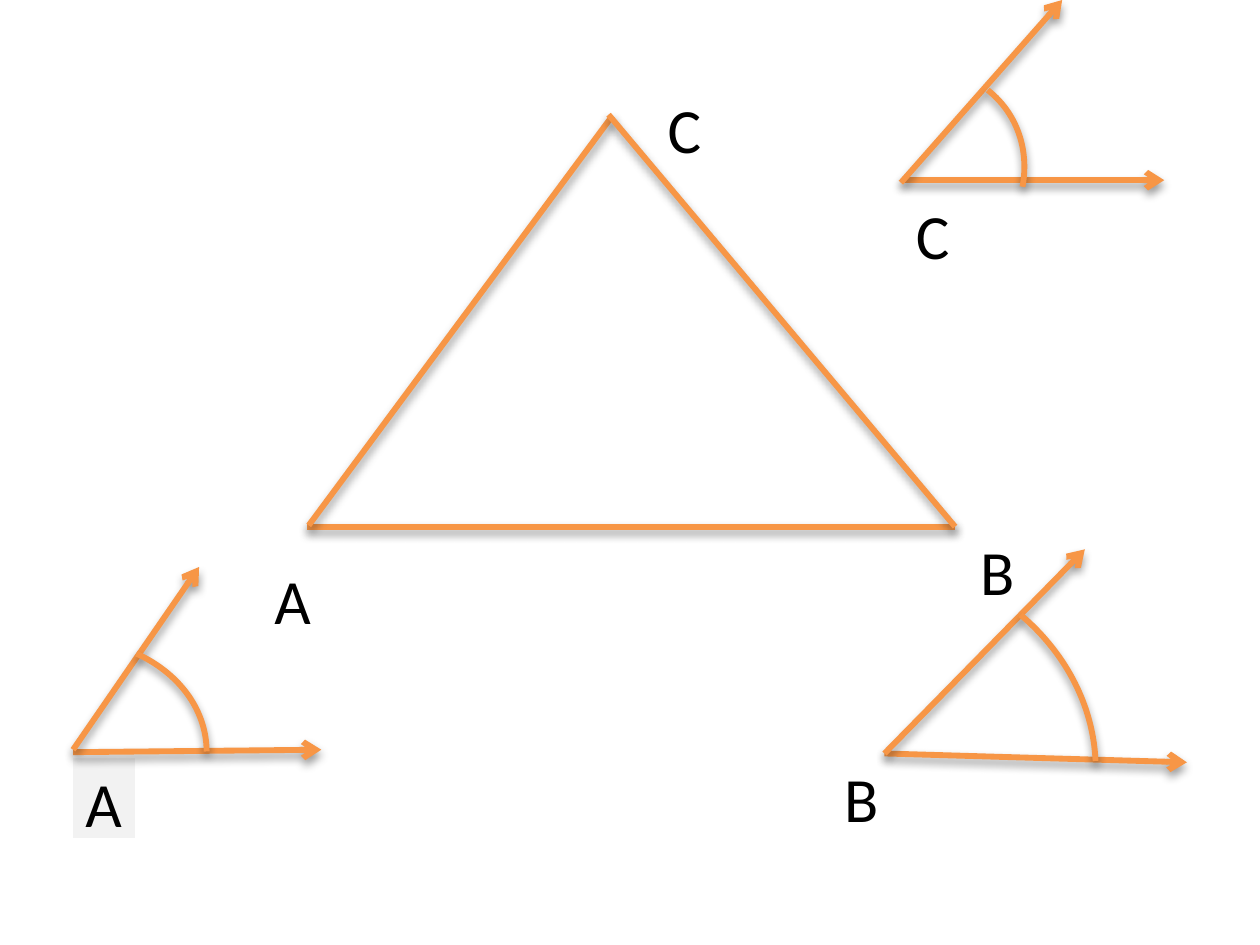
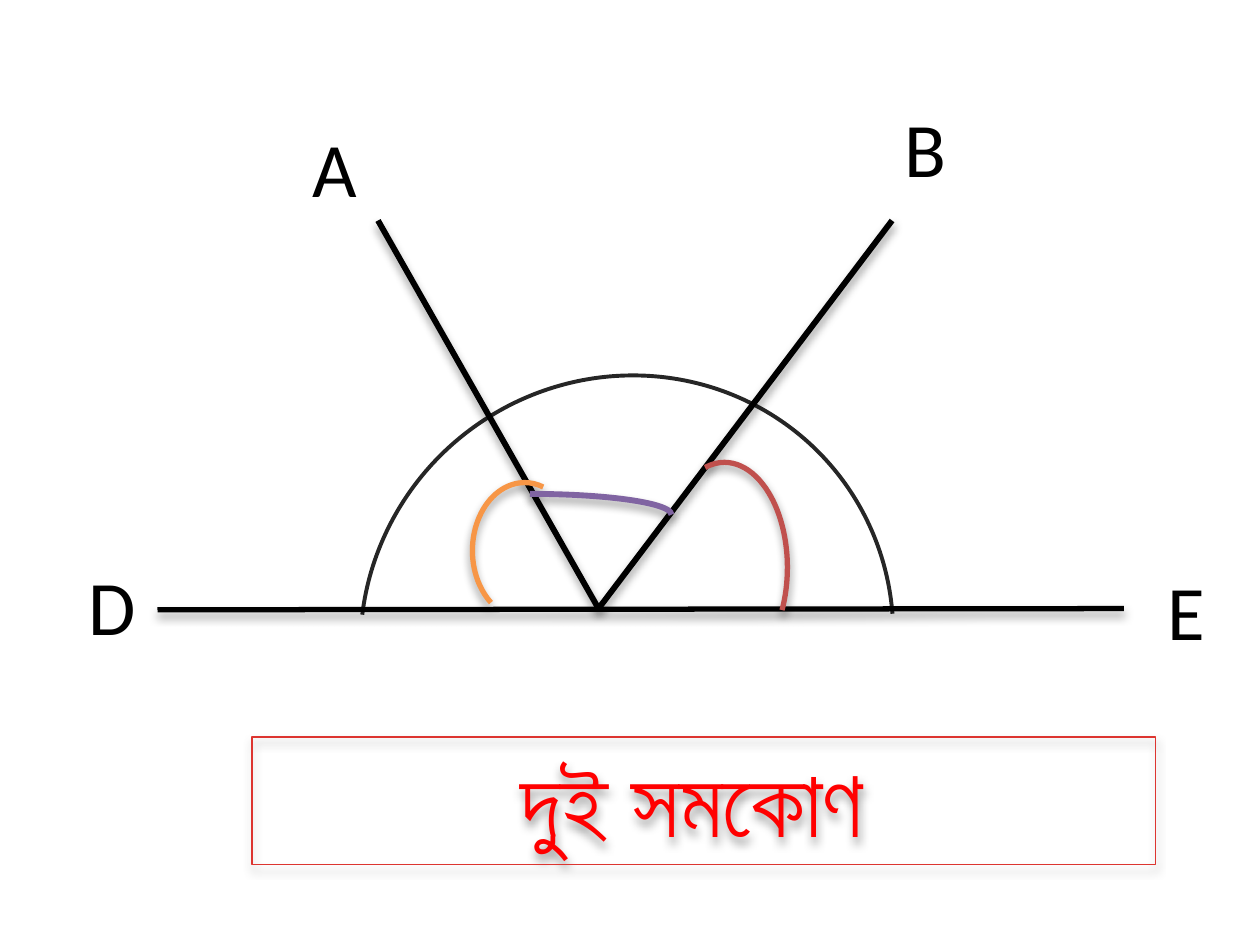
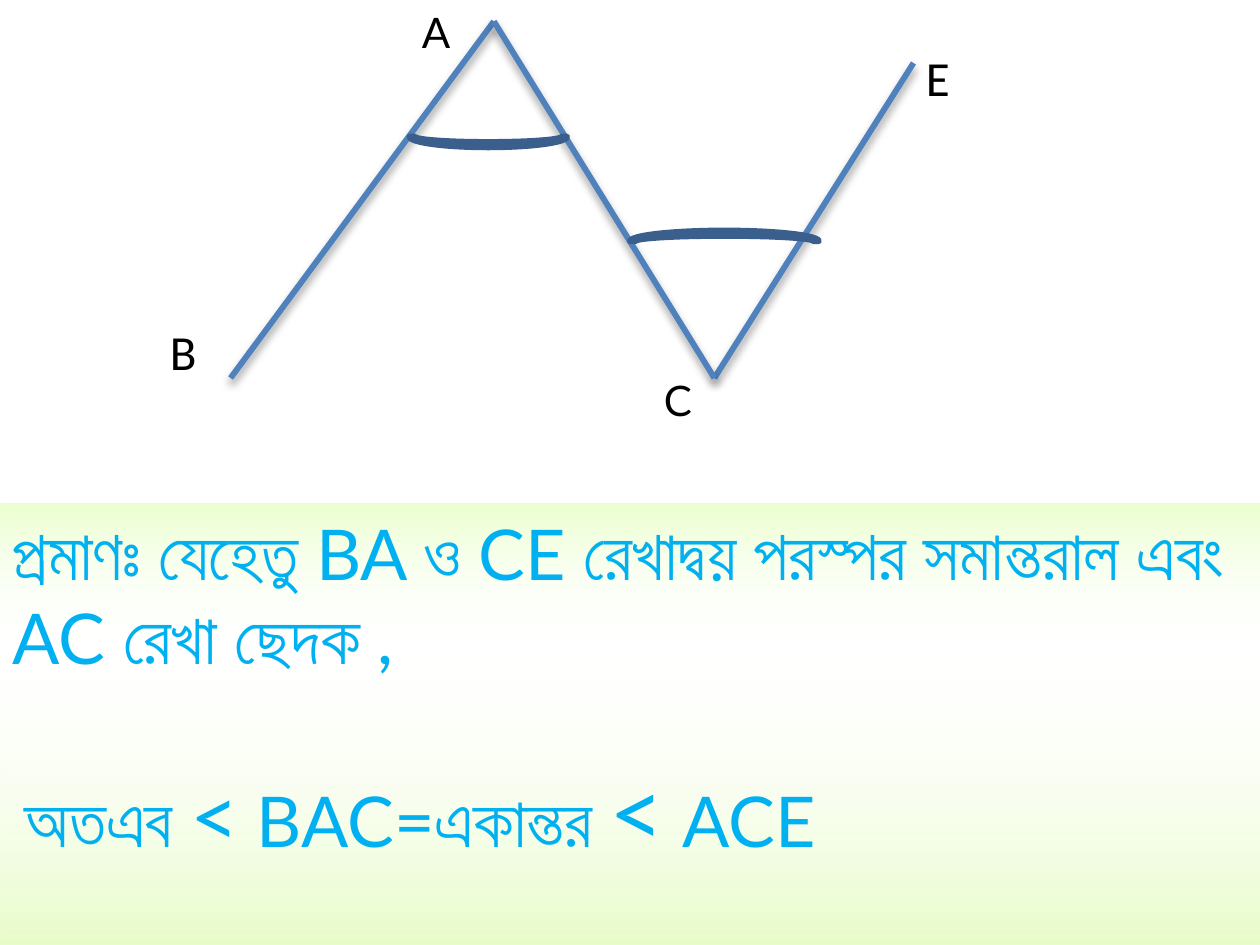
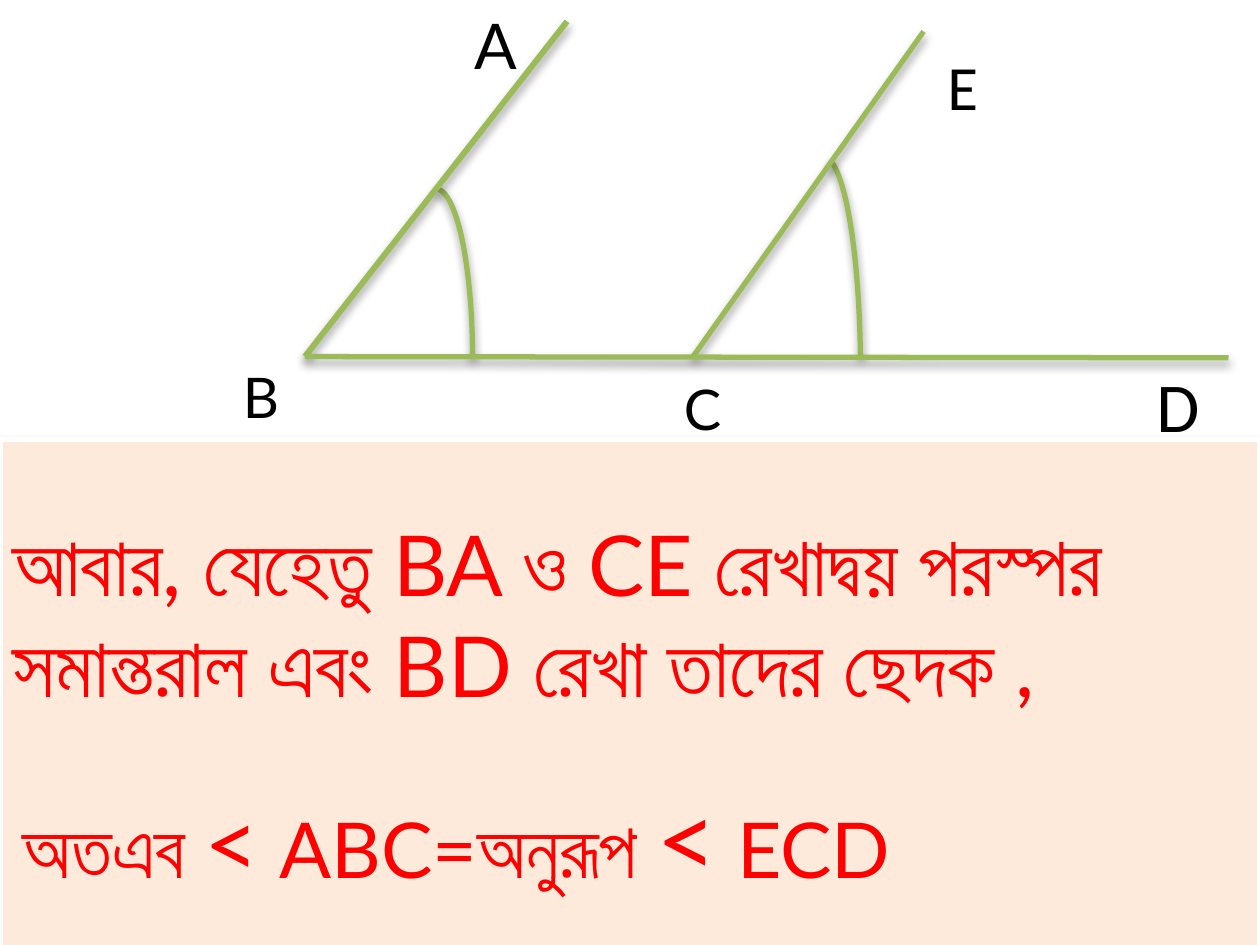
"""Build four geometry slides about the angles of a triangle."""
import dataclasses
import typing

import lxml.etree
import pptx
import pptx.dml.color
import pptx.enum.shapes
import pptx.enum.text
import pptx.oxml
import pptx.oxml.ns
import pptx.util

EMU_PER_PX = 9144
ARC_UNITS_PER_DEGREE = 0.6
SLIDE_WIDTH, SLIDE_HEIGHT = 1000, 750
THICK, THIN = 3.35, 3
COLORS = {
    "black": "000000",
    "charcoal": "262626",
    "white": "FFFFFF",
    "grey": "F2F2F2",
    "orange": "F79646",
    "brick": "C0504D",
    "purple": "8064A2",
    "blue": "4F81BD",
    "navy": "3A5F8C",
    "green": "9BBB59",
    "red": "FF0000",
    "frame": "DD3530",
    "sky": "00B0F0",
    "peach": "FDEADA",
    "lime": "CDF989",
    "pale lime": "EBFFCE",
}
SHAPES = pptx.enum.shapes.MSO_SHAPE
Box = tuple[int, int, int, int]
Point = tuple[int, int]


@dataclasses.dataclass(frozen=True)
class Segment:
    start: Point
    end: Point
    color: str
    width: float = THICK
    arrow: bool = False


@dataclasses.dataclass(frozen=True)
class Arc:
    box: Box
    color: str
    start: float = 270
    end: float = 0
    rotation: float = 0
    width: float = THIN
    shadow: bool = True


@dataclasses.dataclass(frozen=True)
class Label:
    text: str
    box: Box
    size: int = 36
    font: str = "Calibri"
    wrap: bool = True
    fill: str | None = None


@dataclasses.dataclass(frozen=True)
class Line:
    runs: tuple[tuple[str, int], ...]
    space_before: int = 0
    indent: int = 0


@dataclasses.dataclass(frozen=True)
class Panel:
    box: Box
    lines: tuple[Line, ...]
    color: str
    font: str = "Lato"
    fill: str | None = None
    outline: str | None = None
    outline_width: float = THIN
    top_inset: int = 5
    right_inset: int = 10
    centered: bool = False


def px(value: int) -> pptx.util.Emu:
    """Turn px into EMU."""
    return pptx.util.Emu(value * EMU_PER_PX)


def rgb(name: str) -> pptx.dml.color.RGBColor:
    """Look up a named colour."""
    return pptx.dml.color.RGBColor.from_string(COLORS[name])


def set_line(shape: typing.Any, color: str, width: float) -> None:
    """Give a shape or connector a solid line."""
    shape.line.color.rgb = rgb(color)
    shape.line.width = pptx.util.Pt(width)


def set_effects(shape: typing.Any, shadow: bool) -> None:
    """Replace the theme effect by a soft drop shadow or by nothing."""
    qn = pptx.oxml.ns.qn
    effects = lxml.etree.SubElement(shape._element.spPr, qn("a:effectLst"))
    if shadow:
        outer = lxml.etree.SubElement(
            effects, qn("a:outerShdw"), blurRad="66040", dist="38100", dir="5400000", rotWithShape="0"
        )
        color = lxml.etree.SubElement(outer, qn("a:srgbClr"), val=COLORS["black"])
        lxml.etree.SubElement(color, qn("a:alpha"), val="40000")


def set_lime_gradient(shape: typing.Any) -> None:
    """Fill a shape with lime that fades to clear and back, from bottom to top."""
    shape.fill.background()
    properties = shape._element.spPr
    gradient = pptx.oxml.parse_xml(
        f'<a:gradFill {pptx.oxml.ns.nsdecls("a")} rotWithShape="1"><a:gsLst>'
        f'<a:gs pos="0"><a:srgbClr val="{COLORS["lime"]}"/></a:gs>'
        f'<a:gs pos="76000"><a:srgbClr val="{COLORS["white"]}"><a:alpha val="7000"/></a:srgbClr></a:gs>'
        f'<a:gs pos="100000"><a:srgbClr val="{COLORS["pale lime"]}"/></a:gs>'
        '</a:gsLst><a:lin ang="16200000" scaled="0"/></a:gradFill>'
    )
    properties.replace(properties.find(pptx.oxml.ns.qn("a:noFill")), gradient)


def draw_segment(slide: typing.Any, segment: Segment) -> None:
    """Draw a straight line, with an arrowhead if asked."""
    connector = slide.shapes.add_connector(
        pptx.enum.shapes.MSO_CONNECTOR.STRAIGHT, *map(px, segment.start + segment.end)
    )
    set_line(connector, segment.color, segment.width)
    if segment.arrow:
        line = connector.line._get_or_add_ln()
        lxml.etree.SubElement(line, pptx.oxml.ns.qn("a:tailEnd"), type="arrow")
    set_effects(connector, True)


def draw_arc(slide: typing.Any, arc: Arc) -> None:
    """Draw an angle mark between two angles in degrees."""
    shape = slide.shapes.add_shape(SHAPES.ARC, *map(px, arc.box))
    shape.adjustments[0] = arc.start * ARC_UNITS_PER_DEGREE
    shape.adjustments[1] = arc.end * ARC_UNITS_PER_DEGREE
    shape.rotation = arc.rotation
    shape.fill.background()
    set_line(shape, arc.color, arc.width)
    set_effects(shape, arc.shadow)


def draw_block_arc(slide: typing.Any, box: Box, flipped: bool) -> None:
    """Draw a flat block arc, upside down if flipped."""
    shape = slide.shapes.add_shape(SHAPES.BLOCK_ARC, *map(px, box))
    shape.fill.solid()
    shape.fill.fore_color.rgb = rgb("blue")
    set_line(shape, "navy", THICK)
    set_effects(shape, False)
    if flipped:
        shape._element.spPr.xfrm.set("flipV", "1")


def format_run(run: typing.Any, size: int, font: str, color: str) -> None:
    """Set size, font and colour of a run."""
    run.font.size = pptx.util.Pt(size)
    run.font.name = font
    run.font.color.rgb = rgb(color)


def draw_label(slide: typing.Any, label: Label) -> None:
    """Write the letter of a point."""
    shape = slide.shapes.add_textbox(*map(px, label.box))
    text_frame = shape.text_frame
    text_frame.word_wrap = label.wrap
    text_frame.auto_size = pptx.enum.text.MSO_AUTO_SIZE.SHAPE_TO_FIT_TEXT
    text_frame.text = label.text
    format_run(text_frame.paragraphs[0].runs[0], label.size, label.font, "black")
    if label.fill:
        shape.fill.solid()
        shape.fill.fore_color.rgb = rgb(label.fill)


def draw_panel(slide: typing.Any, panel: Panel) -> None:
    """Draw a rectangle that holds the written statement."""
    shape = slide.shapes.add_shape(SHAPES.RECTANGLE, *map(px, panel.box))
    if panel.fill == "lime":
        set_lime_gradient(shape)
    elif panel.fill:
        shape.fill.solid()
        shape.fill.fore_color.rgb = rgb(panel.fill)
    else:
        shape.fill.background()
    if panel.outline:
        set_line(shape, panel.outline, panel.outline_width)
    else:
        shape.line.fill.background()
    set_effects(shape, panel.outline is not None)

    text_frame = shape.text_frame
    text_frame.word_wrap = True
    text_frame.vertical_anchor = pptx.enum.text.MSO_ANCHOR.TOP
    text_frame.margin_top = px(panel.top_inset)
    text_frame.margin_right = px(panel.right_inset)
    alignment = pptx.enum.text.PP_ALIGN.CENTER if panel.centered else pptx.enum.text.PP_ALIGN.LEFT
    for index, line in enumerate(panel.lines):
        paragraph = text_frame.add_paragraph() if index else text_frame.paragraphs[0]
        paragraph.alignment = alignment
        if line.space_before:
            paragraph.space_before = pptx.util.Pt(line.space_before)
        if line.indent:
            paragraph._p.get_or_add_pPr().set("marL", str(px(line.indent)))
        for text, size in line.runs:
            run = paragraph.add_run()
            run.text = text
            format_run(run, size, panel.font, panel.color)


def draw_all(slide: typing.Any, elements: typing.Iterable[Segment | Arc | Label | Panel]) -> None:
    """Draw elements from back to front."""
    painters = {Segment: draw_segment, Arc: draw_arc, Label: draw_label, Panel: draw_panel}
    for element in elements:
        painters[type(element)](slide, element)


def build_triangle(slide: typing.Any) -> None:
    """Draw the triangle and its three angles set apart."""
    sides = (((244, 418), (758, 418)), ((245, 417), (486, 92)), ((483, 91), (758, 418)))
    rays = (
        ((58, 597), (255, 595)), ((58, 595), (158, 450)),
        ((702, 598), (942, 605)), ((702, 598), (861, 436)),
        ((717, 143), (924, 143)), ((715, 145), (843, 0)),
    )
    draw_all(slide, (
        *(Segment(start, end, "orange") for start, end in sides),
        Label("A", (208, 441, 130, 71)),
        Label("B", (768, 418, 48, 71), wrap=False),
        Label("C", (520, 67, 75, 71)),
        Label("A", (58, 602, 49, 63), wrap=False, fill="grey"),
        Label("B", (660, 598, 42, 60), wrap=False),
        Label("C", (717, 151, 47, 71), wrap=False),
        *(Segment(start, end, "orange", arrow=True) for start, end in rays),
        Arc((-50, 508, 214, 177), "orange", 303.42, 0, width=THICK),
        Arc((535, 447, 337, 303), "orange", 291.49, 339.39, 22.5, THICK),
        Arc((617, 58, 200, 173), "orange", 346.21, 35.93, 326.3, THICK),
    ))


def build_straight_angle(slide: typing.Any) -> None:
    """Draw three angles that make up two right angles."""
    draw_all(slide, (
        Panel(
            (200, 585, 717, 101), (Line((("দুই সমকোণ", 54),)),), "red", font="Roboto",
            outline="frame", outline_width=0.75, right_inset=29, centered=True,
        ),
        Arc((284, 300, 427, 417), "charcoal", 225.02, 33.6, 320.6, 2.25, shadow=False),
        Segment((125, 484), (892, 483), "black", THIN),
        Segment((475, 483), (300, 175), "black"),
        Segment((475, 483), (708, 175), "black"),
        Arc((525, 367, 100, 167), "brick", 259.06, 36.45),
        Arc((375, 383, 83, 108), "orange", 123, 286.21),
        Arc((308, 392, 225, 33), "purple", width=THICK),
        Label("A", (238, 91, 71, 84), 44),
        Label("B", (708, 75, 64, 84), 44),
        Label("D", (60, 438, 71, 84), 44),
        Label("E", (917, 442, 71, 84), 44),
    ))


def build_alternate_angles(slide: typing.Any) -> None:
    """Draw the alternate angles and their statement."""
    point_a, point_c = (392, 17), (567, 300)
    draw_all(slide, (
        Label("A", (325, 0, 58, 50), 24, "Lato"),
        Segment(point_a, (183, 300), "blue"),
        Segment((725, 50), point_c, "blue"),
        Label("B", (125, 250, 42, 57), 28),
        Label("C", (517, 292, 108, 50), 24, "Lato"),
        Label("E", (725, 33, 67, 57), 28),
        Segment(point_a, point_c, "blue"),
    ))
    draw_block_arc(slide, (500, 183, 150, 17), flipped=False)
    draw_block_arc(slide, (325, 100, 125, 17), flipped=True)
    premise = Line((("প্রমাণঃ যেহেতু BA ও CE রেখাদ্বয় পরস্পর সমান্তরাল এবং AC রেখা ছেদক ,", 40),))
    result = Line(
        (("অতএব ", 40), ("<", 48), (" BAC=একান্তর ", 40), ("<", 54), (" ACE", 40)),
        space_before=43, indent=10,
    )
    draw_panel(slide, Panel((0, 400, SLIDE_WIDTH, 471), (premise, result), "sky", fill="lime"))


def build_corresponding_angles(slide: typing.Any) -> None:
    """Draw the corresponding angles and their statement."""
    premise = Line((("আবার, যেহেতু BA ও CE রেখাদ্বয় পরস্পর সমান্তরাল এবং BD রেখা তাদের ছেদক ,", 48),))
    result = Line(
        (("অতএব ", 44), ("<", 54), (" ABC=অনুরূপ ", 44), ("<", 60), (" ECD", 44)),
        space_before=34, indent=8,
    )
    point_b = (242, 283)
    draw_all(slide, (
        Panel(
            (0, 349, SLIDE_WIDTH, 427), (premise, result), "red",
            fill="peach", outline="white", top_inset=58,
        ),
        Arc((317, 150, 58, 267), "green", 269.62, 0),
        Arc((625, 125, 58, 342), "green", 271.59, 334.75),
        Segment(point_b, (450, 17), "green"),
        Segment((550, 283), (733, 25), "green", THIN),
        Segment(point_b, (975, 284), "green", THIN),
        Label("A", (367, 0, 50, 71), 36, "Lato"),
        Label("B", (183, 283, 50, 64), 32, "Lato"),
        Label("C", (533, 292, 42, 64), 32, "Lato"),
        Label("E", (742, 33, 58, 71)),
        Label("D", (908, 283, 42, 145), 40),
    ))


def main() -> None:
    """Build and save the presentation."""
    presentation = pptx.Presentation()
    presentation.slide_width = px(SLIDE_WIDTH)
    presentation.slide_height = px(SLIDE_HEIGHT)
    blank_layout = presentation.slide_layouts[6]
    for build in (build_triangle, build_straight_angle, build_alternate_angles, build_corresponding_angles):
        build(presentation.slides.add_slide(blank_layout))
    presentation.save("out.pptx")


if __name__ == "__main__":
    main()
